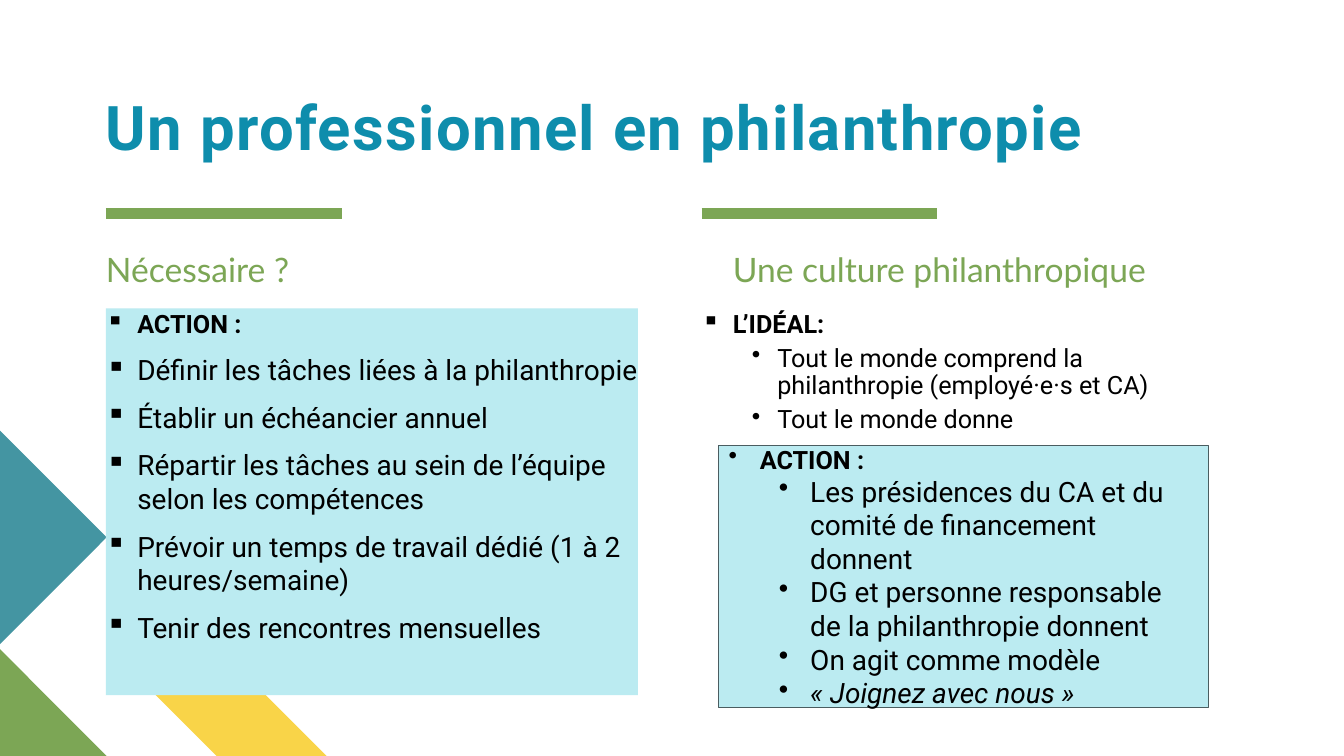
from lxml import etree
from pptx import Presentation
from pptx.dml.color import RGBColor
from pptx.enum.shapes import MSO_CONNECTOR, MSO_SHAPE
from pptx.enum.text import MSO_ANCHOR, PP_ALIGN
from pptx.oxml.ns import qn
from pptx.util import Cm, Pt

STRAIGHT = MSO_CONNECTOR.STRAIGHT
RECTANGLE = MSO_SHAPE.RECTANGLE
TOP, MIDDLE, BOTTOM = MSO_ANCHOR.TOP, MSO_ANCHOR.MIDDLE, MSO_ANCHOR.BOTTOM
LEFT = PP_ALIGN.LEFT

BLUE = RGBColor(0x0E, 0x8D, 0xAC)
GREEN = RGBColor(0x7C, 0xA6, 0x55)
YELLOW = RGBColor(0xF9, 0xD4, 0x48)
TEAL = RGBColor(0x44, 0x95, 0xA2)
PALE_BLUE = RGBColor(0xBB, 0xEB, 0xF1)
SLATE = RGBColor(0x4A, 0x5D, 0x60)
BLACK = RGBColor(0, 0, 0)

# Content
TITLE = "Un professionnel en philanthropie"
NEED_HEADING = "Nécessaire ?"
CULTURE_HEADING = "Une culture philanthropique"
ACTION = "ACTION :"
IDEAL = "L’IDÉAL:"
TASKS = [
    "Définir les tâches liées à la philanthropie",
    "Établir un échéancier annuel",
    "Répartir les tâches au sein de l’équipe selon les compétences",
    "Prévoir un temps de travail dédié (1 à 2 heures/semaine)",
    "Tenir des rencontres mensuelles",
]
IDEALS = [
    "Tout le monde comprend la philanthropie (employé·e·s et CA)",
    "Tout le monde donne",
]
GIVING = [
    "Les présidences du CA et du comité de financement donnent",
    "DG et personne responsable de la philanthropie donnent",
    "On agit comme modèle",
]
MOTTO = "« Joignez avec nous »"

# Corner decoration, points in cm
CORNER = [
    (YELLOW, [(8.23, 19.05), (5.46, 19.05), (2.69, 16.28), (4.09, 14.91)]),
    (GREEN, [(2.69, 19.05), (0, 19.05), (0, 16.36)]),
    (TEAL, [(0, 10.85), (2.69, 13.54), (0, 16.23)]),
]

# Layout, in cm
LEFT_COLUMN, RIGHT_COLUMN = 2.67, 17.68
COLUMN_WIDTH = 13.41
RULE_TOP, RULE_WIDTH = 5.38, 5.94
HEADING_TOP, HEADING_HEIGHT = 6.4, 1.12
BODY_TOP = 7.77
INDENT = 0.79

deck = Presentation()
deck.slide_width, deck.slide_height = Cm(33.87), Cm(19.05)
page = deck.slides.add_slide(deck.slide_layouts[6])


def prepare(shape, anchor=TOP, inset=True):
    frame = shape.text_frame
    frame.word_wrap = True
    frame.vertical_anchor = anchor
    if not inset:
        frame.margin_left = frame.margin_right = 0
        frame.margin_top = frame.margin_bottom = 0
    return frame


def add_text_box(left, top, width, height, anchor=TOP):
    box = page.shapes.add_textbox(Cm(left), Cm(top), Cm(width), Cm(height))
    return prepare(box, anchor, inset=False)


def add_panel(left, top, width, height, outline=None, **frame_format):
    panel = page.shapes.add_shape(RECTANGLE, Cm(left), Cm(top), Cm(width), Cm(height))
    panel.shadow.inherit = False
    panel.fill.solid()
    panel.fill.fore_color.rgb = PALE_BLUE
    if outline is None:
        panel.line.fill.background()
    else:
        panel.line.color.rgb = outline
        panel.line.width = Pt(1)
    return prepare(panel, **frame_format)


def write(frame, text, size=20, font="Roboto", color=BLACK, bold=False, italic=False,
          bullet=None, margin=INDENT, hanging=INDENT, level=0, before=0,
          line_spacing=1.0, tracking=0):
    """Append a paragraph, filling the empty first one when there is one."""
    para = frame.paragraphs[0]
    if para.runs:
        para = frame.add_paragraph()
        para.space_before = Pt(before)
    para.alignment = LEFT
    para.level = level
    para.line_spacing = line_spacing
    if bullet:
        properties = para._p.get_or_add_pPr()
        properties.set("marL", str(Cm(margin)))
        properties.set("indent", str(-Cm(hanging)))
        etree.SubElement(properties, qn("a:buChar")).set("char", bullet)
    span = para.add_run()
    span.text = text
    span.font.name = font
    span.font.size = Pt(size)
    span.font.bold = bold
    span.font.italic = italic
    span.font.color.rgb = color
    if tracking:
        span._r.get_or_add_rPr().set("spc", str(tracking))


for color, points in CORNER:
    corners = [(Cm(x), Cm(y)) for x, y in points]
    builder = page.shapes.build_freeform(*corners[0])
    builder.add_line_segments(corners[1:], close=True)
    piece = builder.convert_to_shape()
    piece.shadow.inherit = False
    piece.fill.solid()
    piece.fill.fore_color.rgb = color
    piece.line.fill.background()

for left in (LEFT_COLUMN, RIGHT_COLUMN):
    rule = page.shapes.add_connector(
        STRAIGHT, Cm(left), Cm(RULE_TOP), Cm(left + RULE_WIDTH), Cm(RULE_TOP))
    rule.line.color.rgb = GREEN
    rule.line.width = Pt(8)
    etree.SubElement(rule._element.spPr, qn("a:effectLst"))

for left, heading in ((LEFT_COLUMN, NEED_HEADING), (18.47, CULTURE_HEADING)):
    frame = add_text_box(left, HEADING_TOP, COLUMN_WIDTH, HEADING_HEIGHT)
    write(frame, heading, size=24, font="Lato", color=GREEN, line_spacing=0.9)

tasks = add_panel(LEFT_COLUMN, BODY_TOP, COLUMN_WIDTH, 9.75, inset=False)
write(tasks, ACTION, size=18, bold=True, bullet="▪")
for task in TASKS:
    write(tasks, task, bullet="▪", before=10)

ideals = add_text_box(RIGHT_COLUMN, BODY_TOP, 13.21, 8.84)
write(ideals, IDEAL, size=18, bold=True, bullet="▪")
for ideal in IDEALS:
    write(ideals, ideal, size=18, bullet="•", margin=1.91, hanging=0.64,
          level=1, before=5, line_spacing=0.9)

giving = add_panel(18.11, 11.23, 12.34, 6.6, outline=SLATE, anchor=MIDDLE)
write(giving, ACTION, size=18, bold=True, bullet="•")
for line in GIVING + [MOTTO]:
    write(giving, line, italic=line == MOTTO, bullet="•", margin=2.06, level=1)

title = add_text_box(LEFT_COLUMN, 2.44, 25.04, 1.7, anchor=BOTTOM)
write(title, TITLE, size=44, color=BLUE, bold=True, line_spacing=0.9, tracking=100)

deck.save("out.pptx")
